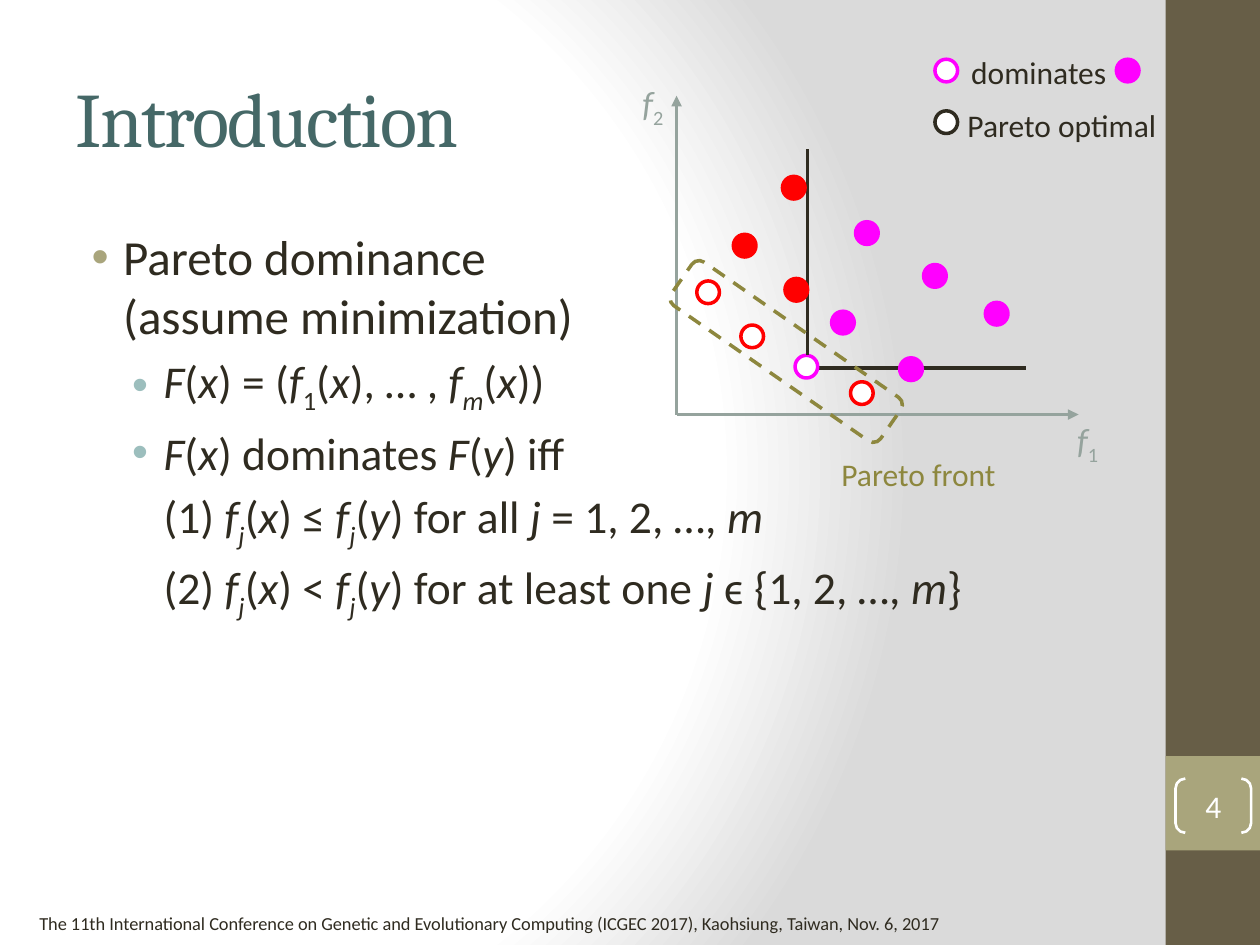
import pptx
import pptx.util
import pptx.oxml
import pptx.oxml.ns
from pptx.dml.color import RGBColor
from pptx.enum.dml import MSO_LINE
from pptx.enum.shapes import MSO_CONNECTOR, MSO_SHAPE
from pptx.enum.text import MSO_ANCHOR, PP_ALIGN
from pptx.util import Inches, Pt

INK = RGBColor(0x2F, 0x2B, 0x20)
TEAL = RGBColor(0x45, 0x68, 0x67)
BROWN = RGBColor(0x67, 0x5E, 0x47)
KHAKI = RGBColor(0xA9, 0xA5, 0x7C)
AQUA = RGBColor(0x9C, 0xBE, 0xBD)
AXIS = RGBColor(0x95, 0xA3, 0x9D)
OLIVE = RGBColor(0x8D, 0x87, 0x3E)
MAGENTA = RGBColor(0xFF, 0x00, 0xFF)
RED = RGBColor(0xFF, 0x00, 0x00)
WHITE = RGBColor(0xFF, 0xFF, 0xFF)

NS = 'xmlns:a="http://schemas.openxmlformats.org/drawingml/2006/main"'
DOT = 0.18
GRADIENT = f"""<a:gradFill {NS} rotWithShape="1"><a:gsLst>
<a:gs pos="0"><a:srgbClr val="FFFFFF"/></a:gs>
<a:gs pos="75000"><a:srgbClr val="FFFFFF"/></a:gs>
<a:gs pos="100000"><a:srgbClr val="DADADA"/></a:gs></a:gsLst>
<a:path path="circle"><a:fillToRect l="20000" t="50000" r="100000" b="50000"/></a:path>
</a:gradFill>"""


def component(argument):
    """Return the runs of the j-th objective of an argument, up to its closing bracket."""
    return [("f", "i"), ("j", "is"), ("(", ""), (argument, "i")]


DEFINITION = [("F", "i"), ("(", ""), ("x", "i"), (") = (", ""), ("f", "i"), ("1", "s"),
              ("(", ""), ("x", "i"), ("), … , ", ""), ("f", "i"), ("m", "is"),
              ("(", ""), ("x", "i"), ("))", "")]
DOMINANCE = [("F", "i"), ("(", ""), ("x", "i"), (") dominates ", ""),
             ("F", "i"), ("(", ""), ("y", "i"), (") iff", "")]
NOT_WORSE = [("(1) ", ""), *component("x"), (") ≤ ", ""), *component("y"),
             (") for all ", ""), ("j", "i"), (" = 1, 2, …, ", ""), ("m", "i")]
BETTER = [("(2) ", ""), *component("x"), (") < ", ""), *component("y"),
          (") for at least one ", ""), ("j ", "i"), ("ϵ {1, 2, …, ", ""), ("m", "i"), ("}", "")]


def add_run(paragraph, text, size, color, style="", font="Calibri"):
    """Add a run; style may hold i for italic and s for subscript."""
    run = paragraph.add_run()
    run.text = text
    run.font.name, run.font.size = font, Pt(size)
    run.font.color.rgb = color
    run.font.italic = "i" in style
    if "s" in style:
        run.font._element.set("baseline", "-25000")
    return run


def add_label(slide, left, top, width, height, runs, size, color, align=PP_ALIGN.LEFT, wrap=True):
    """Add a one-paragraph text box."""
    frame = slide.shapes.add_textbox(
        Inches(left), Inches(top), Inches(width), Inches(height)).text_frame
    frame.word_wrap = wrap
    paragraph = frame.paragraphs[0]
    paragraph.alignment = align
    for text, style in runs:
        add_run(paragraph, text, size, color, style)


def add_block(slide, kind, left, top, width, height, fill=None, line=None, weight=2):
    """Add a preset shape with an optional fill and outline."""
    block = slide.shapes.add_shape(
        kind, Inches(left), Inches(top), Inches(width), Inches(height))
    block.shadow.inherit = False
    for part, color in ((block.fill, fill), (block.line.fill, line)):
        if color is None:
            part.background()
        else:
            part.solid()
            part.fore_color.rgb = color
    if line is not None:
        block.line.width = Pt(weight)
    return block


def add_dot(slide, left, top, color, filled=True):
    """Add a solution marker."""
    add_block(slide, MSO_SHAPE.OVAL, left, top, DOT, DOT, color if filled else WHITE, color)


def add_line(slide, start, end, color, arrow=False):
    """Add a straight line, with an arrowhead at its end if asked."""
    line = slide.shapes.add_connector(
        MSO_CONNECTOR.STRAIGHT, *(Inches(value) for value in (*start, *end)))
    line.line.color.rgb = color
    line.line.width = Pt(2)
    if arrow:
        line.line._get_or_add_ln().append(
            pptx.oxml.parse_xml(f'<a:tailEnd {NS} type="triangle"/>'))
    line._element.spPr.append(pptx.oxml.parse_xml(f"<a:effectLst {NS}/>"))


def set_background(slide):
    """Fill the background with a radial gradient."""
    slide.background.fill.gradient()
    fill = slide._element.find(".//" + pptx.oxml.ns.qn("a:gradFill"))
    fill.getparent().replace(fill, pptx.oxml.parse_xml(GRADIENT))


def add_sidebar(slide, left, top, width, height):
    """Add the side band with the slide number."""
    add_block(slide, MSO_SHAPE.RECTANGLE, left, top, width, height, BROWN)
    add_block(slide, MSO_SHAPE.RECTANGLE, left, top + 6, width, 0.75, KHAKI)
    number = add_block(slide, MSO_SHAPE.DOUBLE_BRACKET, left + 0.08, top + 6.18, 0.6, 0.43,
                       line=WHITE, weight=1.5)
    number.adjustments[0] = 0.18
    frame = number.text_frame
    frame.margin_left = frame.margin_right = frame.margin_top = frame.margin_bottom = 0
    frame.vertical_anchor = MSO_ANCHOR.MIDDLE
    frame.paragraphs[0].alignment = PP_ALIGN.CENTER
    add_run(frame.paragraphs[0], "4", 18, WHITE)


def set_title(slide, left, top, width, height):
    """Place and format the title."""
    title = slide.shapes.title
    title.left, title.top = Inches(left), Inches(top)
    title.width, title.height = Inches(width), Inches(height)
    title.text_frame.vertical_anchor = MSO_ANCHOR.MIDDLE
    paragraph = title.text_frame.paragraphs[0]
    paragraph.alignment = PP_ALIGN.LEFT
    run = add_run(paragraph, "Introduction", 44, TEAL, font="Cambria")
    run.font._element.set("spc", "-100")


def format_item(paragraph, indent, size, bullet):
    """Set the indent, spacing and bullet of a list item."""
    paragraph.space_before = Pt(size * 0.2)
    properties = paragraph._p.get_or_add_pPr()
    properties.set("marL", str(Inches(indent)))
    properties.set("indent", str(Inches(-0.25) if bullet else 0))
    if bullet:
        properties.append(pptx.oxml.parse_xml(
            f'<a:buClr {NS}><a:srgbClr val="{bullet}"/></a:buClr>'))
        properties.append(pptx.oxml.parse_xml(f'<a:buFont {NS} typeface="Arial"/>'))
        properties.append(pptx.oxml.parse_xml(f'<a:buChar {NS} char="•"/>'))


def add_definitions(slide, left, top, width, height):
    """Add the bulleted definition of Pareto dominance."""
    frame = slide.shapes.add_textbox(
        Inches(left), Inches(top), Inches(width), Inches(height)).text_frame
    frame.word_wrap = True
    heading = frame.paragraphs[0]
    format_item(heading, 0.38, 28, KHAKI)
    add_run(heading, "Pareto dominance ", 28, INK)
    heading.add_line_break()
    add_run(heading, "(assume minimization)", 28, INK)
    for runs, bullet in ((DEFINITION, AQUA), (DOMINANCE, AQUA), (NOT_WORSE, None), (BETTER, None)):
        item = frame.add_paragraph()
        item.level = 1
        format_item(item, 0.7, 26, bullet)
        for text, style in runs:
            add_run(item, text, 26, INK, style)


def add_plot(slide, left, top):
    """Add the objective space with its solutions and Pareto front."""
    def at(x, y):
        return left + x, top + y

    origin = at(0.37, 2.69)
    add_line(slide, at(1.49, 2.32), at(3.14, 2.32), INK)
    for tip in (at(3.56, 2.69), at(0.37, 0.16)):
        add_line(slide, origin, tip, AXIS, arrow=True)
    for index, corner in (("1", at(3.45, 2.67)), ("2", at(0, 0))):
        add_label(slide, *corner, 0.49, 0.39, [("f", "i"), (index, "s")], 20, AXIS)
    add_dot(slide, *at(1.31, 2.22), MAGENTA, filled=False)
    for x, y in ((1.6, 1.87), (2.14, 2.24), (1.79, 1.16), (2.33, 1.5), (2.82, 1.8)):
        add_dot(slide, *at(x, y), MAGENTA)
    add_line(slide, at(1.41, 2.22), at(1.41, 0.58), INK)
    for x, y in ((0.53, 1.63), (0.88, 1.98), (1.75, 2.43)):
        add_dot(slide, *at(x, y), RED, filled=False)
    for x, y in ((0.82, 1.26), (1.23, 1.61), (1.21, 0.8)):
        add_dot(slide, *at(x, y), RED)
    front = add_block(slide, MSO_SHAPE.ROUNDED_RECTANGLE, *at(0.23, 1.98), 2.02, 0.42, line=OLIVE)
    front.rotation = 34.8
    front.line.dash_style = MSO_LINE.DASH
    add_label(slide, *at(1.58, 2.96), 1.44, 0.4, [("Pareto front", "")], 18, OLIVE, wrap=False)


def add_legend(slide, left, top):
    """Add the key to the solution markers."""
    add_dot(slide, left, top + 0.1, MAGENTA, filled=False)
    add_label(slide, left + 0.19, top, 1.29, 0.4, [("dominates", "")], 18, INK, wrap=False)
    add_dot(slide, left + 1.44, top + 0.1, MAGENTA)
    add_dot(slide, left, top + 0.51, INK, filled=False)
    add_label(slide, left + 0.16, top + 0.42, 1.72, 0.4, [("Pareto optimal", "")], 18, INK,
              wrap=False)


def main():
    """Build and save the slide."""
    deck = pptx.Presentation()
    deck.slide_width, deck.slide_height = Inches(10), Inches(7.5)
    slide = deck.slides.add_slide(deck.slide_layouts[5])
    set_background(slide)
    add_sidebar(slide, 9.25, 0, 0.75, 7.5)
    add_label(slide, 0.12, 7.19, 7.44, 0.28, [(
        "The 11th International Conference on Genetic and Evolutionary Computing (ICGEC 2017), "
        "Kaohsiung, Taiwan, Nov. 6, 2017", "")], 10.5, INK, PP_ALIGN.RIGHT)
    set_title(slide, 0.5, 0.3, 8.33, 1.25)
    add_definitions(slide, 0.5, 1.75, 8.33, 5.25)
    add_plot(slide, 5, 0.6)
    add_legend(slide, 7.42, 0.37)
    deck.save("out.pptx")


if __name__ == "__main__":
    main()
